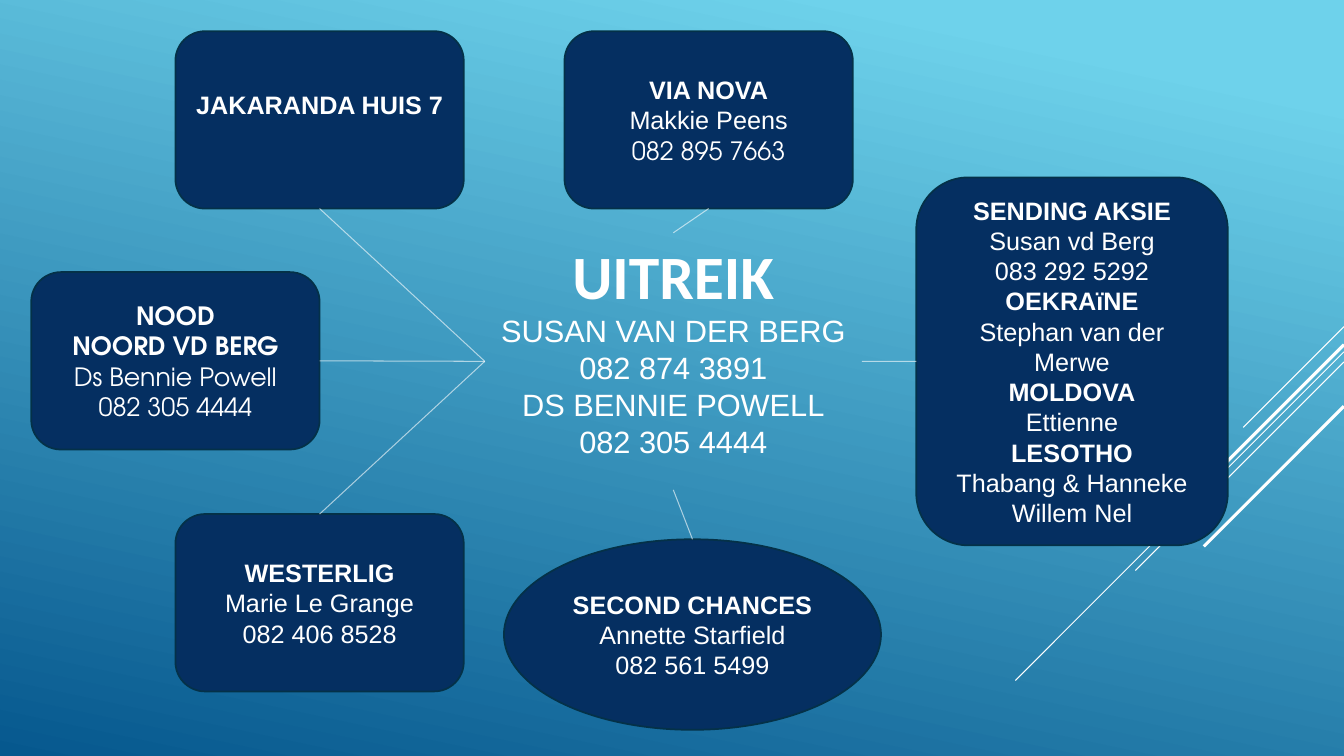
"""Build the outreach contact map: a central hub linked to six ministry cards."""
from lxml import etree
from pptx import Presentation
from pptx.dml.color import RGBColor
from pptx.enum.shapes import MSO_CONNECTOR, MSO_SHAPE
from pptx.enum.text import MSO_ANCHOR, MSO_AUTO_SIZE, PP_ALIGN
from pptx.oxml.ns import qn
from pptx.util import Pt

STRAIGHT = MSO_CONNECTOR.STRAIGHT
CARD, OVAL = MSO_SHAPE.ROUNDED_RECTANGLE, MSO_SHAPE.OVAL
TOP_ANCHOR, MIDDLE_ANCHOR = MSO_ANCHOR.TOP, MSO_ANCHOR.MIDDLE
NO_AUTOFIT = MSO_AUTO_SIZE.NONE
CENTER = PP_ALIGN.CENTER
TOP, LEFT, BOTTOM, RIGHT = range(4)
TITLE_ONLY = 5

THEME = {
    "sky": "6ED2EB", "sea": "06588E", "card": "052F61", "edge": "043148", "white": "FFFFFF",
    "heading_font": "Calibri", "body_font": "Arial", "round_font": "TeX Gyre Adventor",
    "heading_size": 44, "hub_size": 22, "card_size": 18,
    "leading": 1.2, "edge_width": 1.25, "thin": 0.75, "thick": 2.25, "spoke_alpha": 60,
}
BODY, ROUND = THEME["body_font"], THEME["round_font"]
SLIDE_SIZE = (960, 540)

HUB_BOX = (346.3, 166.3, 269.3, 183.6)
HUB_HEADING = "UITREIK"
HUB_CONTACTS = ["SUSAN VAN DER BERG", "082 874 3891", "DS BENNIE POWELL", "082 305 4444"]

CARD_SIZE = (206, 126.7)
MINISTRIES = [
    {"outline": CARD, "box": (22.3, 194.4, *CARD_SIZE), "hub_side": LEFT, "side": RIGHT,
     "lines": [("NOOD", True, ROUND), ("NOORD VD BERG", True, ROUND),
               ("Ds Bennie Powell", False, ROUND), ("082 305 4444", False, ROUND)]},
    {"outline": CARD, "box": (125.3, 22.3, *CARD_SIZE), "hub_side": LEFT, "side": BOTTOM,
     "raise": 21.6, "lines": [("JAKARANDA HUIS 7", True, BODY)]},
    {"outline": CARD, "box": (125.3, 367.2, *CARD_SIZE), "hub_side": LEFT, "side": TOP,
     "lines": [("WESTERLIG", True, BODY), ("Marie Le Grange", False, BODY),
               ("082 406 8528", False, BODY)]},
    {"outline": CARD, "box": (403.2, 22.3, *CARD_SIZE), "hub_side": TOP, "side": BOTTOM,
     "lines": [("VIA NOVA", True, BODY), ("Makkie Peens", False, BODY),
               ("082 895 7663", False, ROUND)]},
    {"outline": CARD, "box": (654.5, 126.7, 222.5, 262.8), "hub_side": RIGHT, "side": LEFT,
     "lines": [("SENDING AKSIE", True, BODY), ("Susan vd Berg", False, BODY),
               ("083 292 5292", False, BODY), ("OEKRAïNE", True, BODY),
               ("Stephan van der Merwe", False, BODY), ("MOLDOVA", True, BODY),
               ("Ettienne", False, BODY), ("LESOTHO", True, BODY),
               ("Thabang & Hanneke", False, BODY), ("Willem Nel", False, BODY)]},
    {"outline": OVAL, "box": (360, 385.2, 269.3, 136.1), "hub_side": BOTTOM, "side": TOP,
     "lines": [("SECOND CHANCES", True, BODY), ("Annette Starfield", False, BODY),
               ("082 561 5499", False, BODY)]},
]

RAYS = [(233.3, 72, "thin"), (251.3, 234.7, "thin"), (258.5, 149, "thin"),
        (246.2, 137.5, "thick"), (290.2, 100.1, "thick")]


def color(name):
    """Return a theme colour."""
    return RGBColor.from_string(THEME[name])


def apply(target, formats):
    """Set every format value on the target."""
    for attribute, value in formats.items():
        setattr(target, attribute, value)


def write_lines(frame, lines):
    """Fill a text frame with centred (text, bold, font, size, leading) lines."""
    for index, (text, bold, font, size, leading) in enumerate(lines):
        paragraph = frame.paragraphs[0] if index == 0 else frame.add_paragraph()
        apply(paragraph, {"alignment": CENTER, "line_spacing": leading,
                          "space_before": Pt(0), "space_after": Pt(0)})
        run = paragraph.add_run()
        run.text = text
        apply(run.font, {"name": font, "size": Pt(size), "bold": bold})
        run.font.color.rgb = color("white")


def add_line(slide, start, end, weight):
    """Draw a flat white line and return it."""
    line = slide.shapes.add_connector(STRAIGHT, *map(Pt, start + end))
    line.line.width = Pt(THEME[weight])
    line.line.color.rgb = color("white")
    etree.SubElement(line._element.spPr, qn("a:effectLst"))
    return line


def add_hub(slide):
    """Place the central title with its contacts."""
    hub = slide.shapes.title
    apply(hub, dict(zip(("left", "top", "width", "height"), map(Pt, HUB_BOX))))
    frame = hub.text_frame
    apply(frame, {"word_wrap": True, "auto_size": NO_AUTOFIT, "vertical_anchor": TOP_ANCHOR})
    size = THEME["hub_size"]
    heading = (HUB_HEADING, True, THEME["heading_font"], THEME["heading_size"], 1.0)
    contacts = [(text, False, BODY, size, Pt(size * THEME["leading"])) for text in HUB_CONTACTS]
    write_lines(frame, [heading] + contacts)
    return hub


def add_ministry(slide, ministry):
    """Draw one ministry card."""
    card = slide.shapes.add_shape(ministry["outline"], *map(Pt, ministry["box"]))
    card.shadow.inherit = False
    card.fill.solid()
    card.fill.fore_color.rgb = color("card")
    card.line.color.rgb = color("edge")
    card.line.width = Pt(THEME["edge_width"])
    apply(card.text_frame, {"word_wrap": True, "vertical_anchor": MIDDLE_ANCHOR,
                            "margin_bottom": Pt(3.6 + ministry.get("raise", 0))})
    size = THEME["card_size"]
    leading = Pt(size * THEME["leading"])
    write_lines(card.text_frame, [(*line, size, leading) for line in ministry["lines"]])
    return card


def add_spoke(slide, hub, card, ministry):
    """Join a card to the hub with a translucent line."""
    spoke = add_line(slide, (0, 0), (0, 0), "thin")
    spoke.begin_connect(hub, ministry["hub_side"])
    spoke.end_connect(card, ministry["side"])
    tint = spoke._element.spPr.find(".//" + qn("a:srgbClr"))
    etree.SubElement(tint, qn("a:alpha"), val=str(THEME["spoke_alpha"] * 1000))


def main():
    """Assemble and save the slide."""
    deck = Presentation()
    deck.slide_width, deck.slide_height = map(Pt, SLIDE_SIZE)
    slide = deck.slides.add_slide(deck.slide_layouts[TITLE_ONLY])
    backdrop = slide.background.fill
    backdrop.gradient()
    backdrop.gradient_angle = 360 - 102
    for stop, (name, position) in zip(backdrop.gradient_stops, [("sky", 0.1), ("sea", 1)]):
        stop.color.rgb = color(name)
        stop.position = position
    right_edge = SLIDE_SIZE[0]
    for top, run, weight in RAYS:
        add_line(slide, (right_edge, top), (right_edge - run, top + run), weight)
    hub = add_hub(slide)
    for ministry in MINISTRIES:
        add_spoke(slide, hub, add_ministry(slide, ministry), ministry)
    deck.save("out.pptx")


if __name__ == "__main__":
    main()
